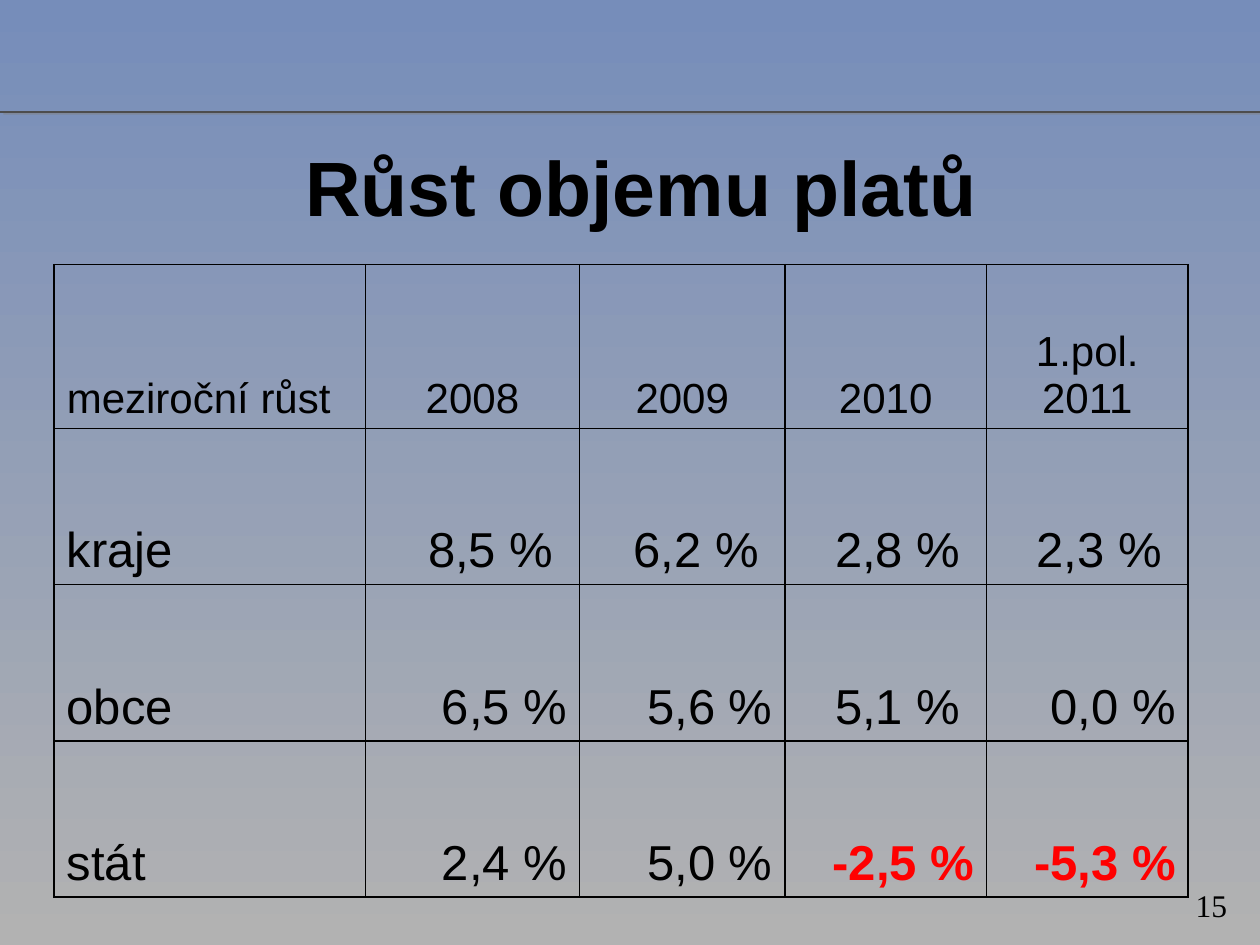
from dataclasses import dataclass

from lxml import etree
from pptx import Presentation
from pptx import util as u
from pptx.dml.color import RGBColor
from pptx.enum import shapes, text

NS = "http://schemas.openxmlformats.org/drawingml/2006/main"
LEFT, MID, RIGHT = text.PP_ALIGN.LEFT, text.PP_ALIGN.CENTER, text.PP_ALIGN.RIGHT


@dataclass(frozen=True)
class Theme:
    """Colours, fonts and type sizes of the slide."""
    top: str = "768DBA"
    base: str = "B2B2B2"
    rule: str = "4D4D4D"
    shade: str = "808080"
    ink: str = "000000"
    alert: str = "FF0000"
    sans: str = "Arial"
    serif: str = "Times New Roman"
    title: int = 44
    body: int = 28
    head: int = 24
    page: int = 18


THEME = Theme()
HEAD = ["meziroční růst", "2008", "2009", "2010", "1.pol.\n2011"]
ROWS = [
    ["kraje", "8,5 %", "6,2 %", "2,8 %", "2,3 %"],
    ["obce", "6,5 %", "5,6 %", "5,1 %", "0,0 %"],
    ["stát", "2,4 %", "5,0 %", "-2,5 %", "-5,3 %"],
]
INSET = {(1, 1), (1, 2), (1, 3), (1, 4), (2, 3)}
COLS = [2.47, 1.7, 1.63, 1.6, 1.6]
TALL = [1.3, 1.24, 1.24, 1.24]


def assign(obj, form):
    """Set each attribute named in a dict of format values."""
    for name, value in form.items():
        setattr(obj, name, value)


def write(frame, words, size, align=LEFT, face=THEME.sans, tint=THEME.ink, bold=False):
    """Fill a text frame with formatted paragraphs."""
    frame.text = words
    for para in frame.paragraphs:
        para.alignment = align
        for run in para.runs:
            assign(run.font, {"size": u.Pt(size), "name": face, "bold": bold})
            run.font.color.rgb = RGBColor.from_string(tint)


def backdrop(slide):
    """Paint the vertical background gradient."""
    fill = slide.background.fill
    fill.gradient()
    fill.gradient_angle = 270
    for stop, tint in zip(fill.gradient_stops, (THEME.top, THEME.base)):
        stop.color.rgb = RGBColor.from_string(tint)


def rule(slide, y):
    """Draw the shaded line across the slide."""
    line = slide.shapes.add_connector(
        shapes.MSO_CONNECTOR.STRAIGHT, 0, u.Inches(y), u.Inches(10), u.Inches(y))
    line.line.width = u.Pt(1)
    line.line.color.rgb = RGBColor.from_string(THEME.rule)
    line._element.spPr.append(etree.fromstring(
        f'<a:effectLst xmlns:a="{NS}"><a:outerShdw dist="{u.Pt(2.2)}" dir="1620000">'
        f'<a:srgbClr val="{THEME.shade}"><a:alpha val="50000"/></a:srgbClr>'
        '</a:outerShdw></a:effectLst>'))


def label(slide, area, words, size, form, **style):
    """Add a text box in the given area."""
    frame = slide.shapes.add_textbox(*map(u.Inches, area)).text_frame
    assign(frame, {"word_wrap": True, **form})
    write(frame, words, size, **style)


def border(cell):
    """Give a cell thin lines on all sides and no fill."""
    props = cell._tc.get_or_add_tcPr()
    for side in "LRTB":
        props.append(etree.fromstring(
            f'<a:ln{side} xmlns:a="{NS}" w="{u.Pt(1)}"><a:solidFill>'
            f'<a:srgbClr val="{THEME.ink}"/></a:solidFill></a:ln{side}>'))
    cell.fill.background()


def grid(slide, left, top):
    """Add the table of yearly growth."""
    data = [HEAD, *ROWS]
    area = map(u.Inches, (left, top, sum(COLS), sum(TALL)))
    table = slide.shapes.add_table(len(data), len(HEAD), *area).table
    assign(table, {"first_row": False, "horz_banding": False})
    for col, wide in zip(table.columns, COLS):
        col.width = u.Inches(wide)
    for r, (row, tall) in enumerate(zip(data, TALL)):
        table.rows[r].height = u.Inches(tall)
        for c, words in enumerate(row):
            cell = table.cell(r, c)
            loss = words.startswith("-")
            assign(cell, {
                "vertical_anchor": text.MSO_ANCHOR.BOTTOM,
                "margin_right": u.Inches(0.21 if (r, c) in INSET else 0.1),
            })
            write(cell.text_frame, words, THEME.body if r else THEME.head,
                  align=LEFT if c == 0 else RIGHT if r else MID,
                  tint=THEME.alert if loss else THEME.ink, bold=loss)
            border(cell)


def main():
    """Build the slide and save it."""
    deck = Presentation()
    assign(deck, {"slide_width": u.Inches(10), "slide_height": u.Inches(7.5)})
    slide = deck.slides.add_slide(deck.slide_layouts[6])
    backdrop(slide)
    rule(slide, 0.89)
    label(slide, (9.02, 6.98, 1.1, 0.4), "15", THEME.page,
          {"margin_left": u.Inches(0.47)}, face=THEME.serif)
    label(slide, (0.59, 0.91, 9, 1.13), "Růst objemu platů", THEME.title,
          {"vertical_anchor": text.MSO_ANCHOR.MIDDLE}, align=MID, bold=True)
    grid(slide, 0.43, 2.1)
    deck.save("out.pptx")


if __name__ == "__main__":
    main()
